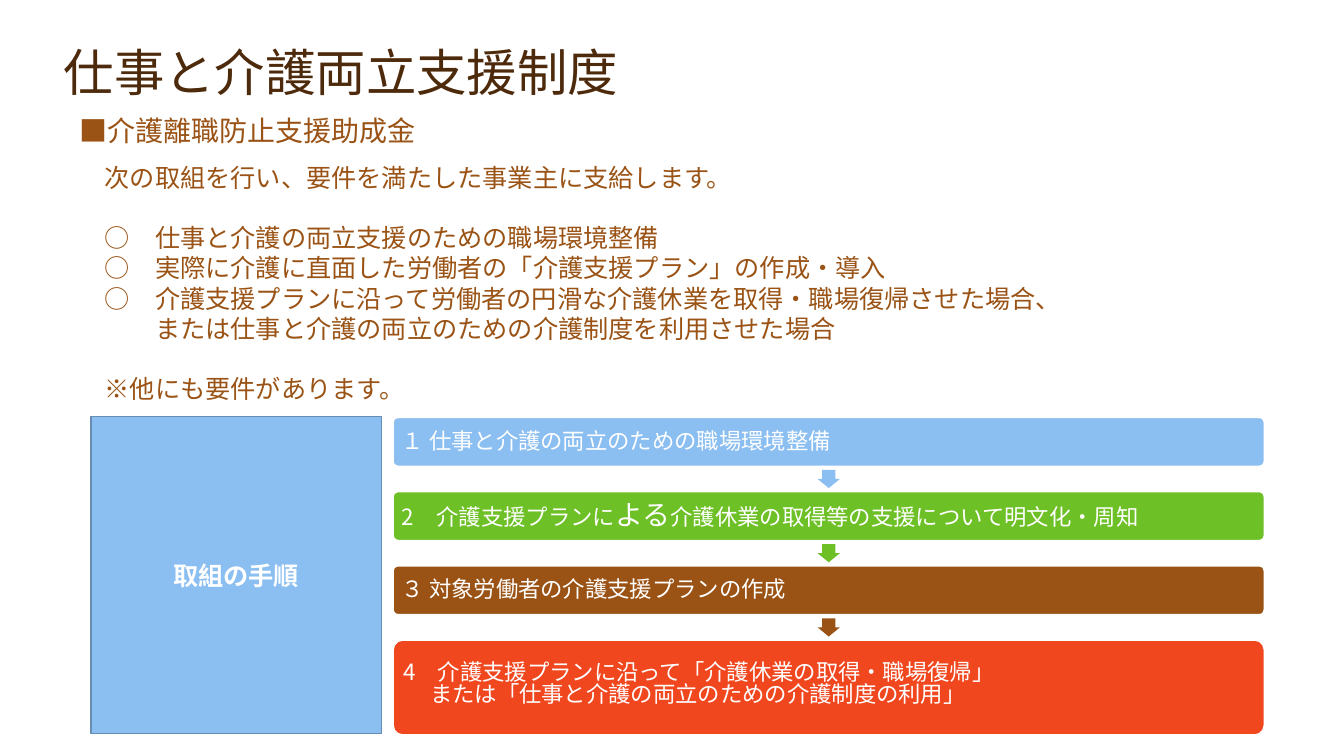
from lxml import etree
from pptx import Presentation, util as u
from pptx.dml.color import RGBColor
from pptx.enum import shapes, text
from pptx.oxml.ns import qn

HUES = {"dark": "4D2A0B", "brown": "9A5315", "blue": "8BBEF1", "edge": "678DB2",
        "green": "6DC025", "red": "F1471F", "white": "FFFFFF"}
FACE = "Noto Sans CJK JP"
KIND = shapes.MSO_SHAPE


def write(par, words, size=18, hue="brown", bold=False, align=text.PP_ALIGN.LEFT,
          line=None, before=0, after=0, left=0):
    """Fill a paragraph; words is a string or a list of (string, size) runs."""
    par.alignment = align
    par.space_before, par.space_after = u.Pt(before), u.Pt(after)
    if line:
        par.line_spacing = line
    if left:
        par._p.get_or_add_pPr().set("marL", str(u.Cm(left)))
    for part, points in [(words, size)] if isinstance(words, str) else words:
        run = par.add_run()
        run.text = part
        font = run.font
        font.size, font.bold, font.name = u.Pt(points), bold, FACE
        font.color.rgb = RGBColor.from_string(HUES[hue])
        etree.SubElement(run._r.get_or_add_rPr(), qn("a:ea"), typeface=FACE)


class Page:
    """Current slide and the house style of its elements."""

    def __init__(self, deck):
        self.slide = deck.slides.add_slide(deck.slide_layouts[5])

    def fill(self, frame, rows, **style):
        """Write rows of (words, own format) with a shared style."""
        for i, (words, own) in enumerate(rows):
            par = frame.add_paragraph() if i else frame.paragraphs[0]
            write(par, words, **{**style, **own})

    def title(self, words, *box):
        head = self.slide.shapes.title
        head.left, head.top, head.width, head.height = map(u.Cm, box)
        frame = head.text_frame
        frame.auto_size = text.MSO_AUTO_SIZE.NONE
        frame.vertical_anchor = text.MSO_ANCHOR.TOP
        write(frame.paragraphs[0], words, size=36, hue="dark", line=0.9)

    def note(self, rows, *box, wrap=True, **style):
        frame = self.slide.shapes.add_textbox(*map(u.Cm, box)).text_frame
        frame.word_wrap = wrap
        frame.auto_size = text.MSO_AUTO_SIZE.SHAPE_TO_FIT_TEXT
        self.fill(frame, rows, **style)

    def block(self, kind, hue, *box, edge=None):
        item = self.slide.shapes.add_shape(kind, *map(u.Cm, box))
        item.shadow.inherit = False
        item.fill.solid()
        item.fill.fore_color.rgb = RGBColor.from_string(HUES[hue])
        if edge:
            item.line.color.rgb = RGBColor.from_string(HUES[edge])
            item.line.width = u.Pt(1)
        else:
            item.line.fill.background()
        item.text_frame.vertical_anchor = text.MSO_ANCHOR.MIDDLE
        return item

    def step(self, rows, hue, *box, line=0.9):
        item = self.block(KIND.ROUNDED_RECTANGLE, hue, *box, edge="white")
        item.adjustments[0] = 0.1
        frame = item.text_frame
        frame.word_wrap = True
        frame.margin_left = frame.margin_right = u.Cm(0.18)
        frame.margin_top = frame.margin_bottom = u.Cm(0.18)
        self.fill(frame, rows, size=16, hue="white", line=line, after=5.6)

    def arrow(self, hue, x, y, wide=0.46, high=0.56):
        """Draw a downward arrow centred on x, y."""
        item = self.block(KIND.RIGHT_ARROW, hue, x - wide / 2, y - high / 2, wide, high)
        item.rotation = 90
        item.adjustments[0] = 0.6


def main():
    deck = Presentation()
    deck.slide_width, deck.slide_height = u.Cm(33.87), u.Cm(19.05)
    page = Page(deck)
    page.title("仕事と介護両立支援制度", 1.35, 1.07, 27.94, 1.65)
    page.note([("■介護離職防止支援助成金", {})], 1.75, 2.74, 9.07, 1.12,
              wrap=False, size=20)
    gap = {"before": 21.6}
    page.note([
        ("次の取組を行い、要件を満たした事業主に支給します。", {}),
        ("○　仕事と介護の両立支援のための職場環境整備", gap),
        ("○　実際に介護に直面した労働者の「介護支援プラン」の作成・導入", {}),
        ("○　介護支援プランに沿って労働者の円滑な介護休業を取得・職場復帰させた場合、", {}),
        ("または仕事と介護の両立のための介護制度を利用させた場合", {"left": 1.27}),
        ("※他にも要件があります。", gap),
    ], 2.39, 3.96, 26.9, 6.4)

    left, top, wide, high, pitch = 9.91, 10.52, 21.95, 1.23, 1.87
    steps = [
        ("blue", "１ 仕事と介護の両立のための職場環境整備"),
        ("green", [("2　介護支援プランに", 16), ("よる", 20),
                   ("介護休業の取得等の支援について明文化・周知", 16)]),
        ("brown", "３ 対象労働者の介護支援プランの作成"),
    ]
    for i, (hue, words) in enumerate(steps):
        y = top + i * pitch
        page.step([(words, {})], hue, left, y, wide, high)
        page.arrow(hue, left + wide / 2, y + (high + pitch) / 2)
    page.step([
        ("4　介護支援プランに沿って「介護休業の取得・職場復帰」", {}),
        ("または「仕事と介護の両立のための介護制度の利用」", {"left": 0.68}),
    ], "red", left, top + len(steps) * pitch, wide, 2.39, line=0.5)

    side = page.block(KIND.RECTANGLE, "blue", 2.29, 10.49, 7.32, 8.0, edge="edge")
    write(side.text_frame.paragraphs[0], "取組の手順", hue="white", bold=True,
          align=text.PP_ALIGN.CENTER)
    deck.save("out.pptx")


if __name__ == "__main__":
    main()
